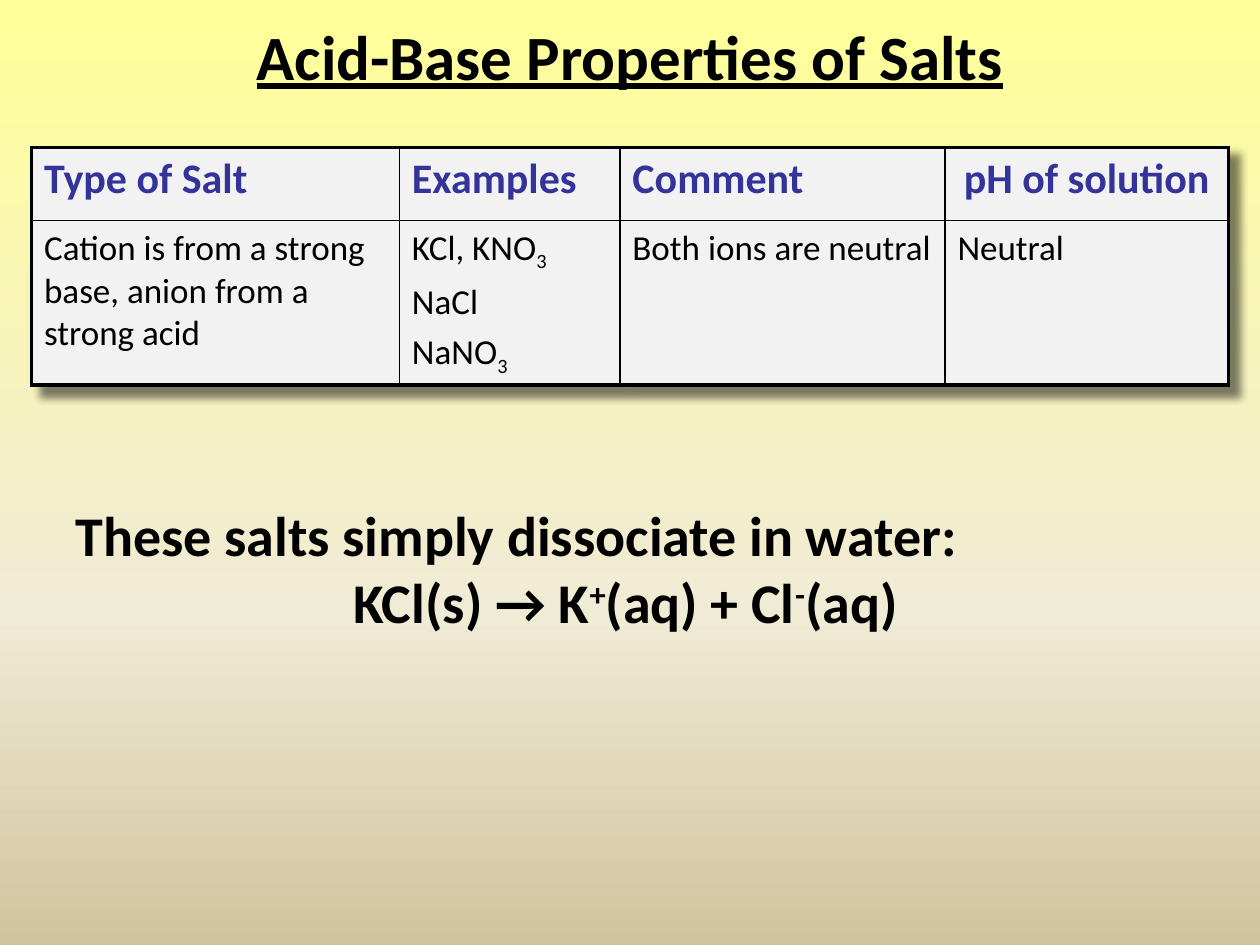
from dataclasses import dataclass

from pptx import Presentation
from pptx import util as u
from pptx.dml.color import RGBColor
from pptx.enum import text
from pptx.oxml import parse_xml
from pptx.oxml.ns import nsdecls


@dataclass(frozen=True)
class Theme:
    font: str = "Calibri"
    ink: str = "000000"
    heading: str = "333399"
    cell: str = "F2F2F2"
    backdrop: tuple = ((0, "FFFF99"), (65, "F0EBD5"), (100, "D1C39F"))
    title_size: int = 36
    note_size: int = 32
    head_size: int = 24
    cell_size: int = 20
    outer_line: float = 2.25
    inner_line: float = 1
    subscript: int = -25
    superscript: int = 30


THEME = Theme()
WIDTH, HEIGHT = u.Inches(10), u.Inches(7.5)
COLUMNS = (2.92, 1.75, 2.58, 2.25)
ROWS = (0.58, 1.24)
LEFT, CENTER = text.PP_ALIGN.LEFT, text.PP_ALIGN.CENTER
SUB_3 = ("3", THEME.subscript)

# Each cell is a list of paragraphs, each paragraph a list of (words, baseline)
HEADINGS = ("Type of Salt", "Examples", "Comment", "pH of solution")
SALTS = (
    [[("Cation is from a strong base, anion from a strong acid", 0)]],
    [[("KCl, KNO", 0), SUB_3], [("NaCl", 0)], [("NaNO", 0), SUB_3]],
    [[("Both ions are neutral", 0)]],
    [[("Neutral", 0)]],
)
REACTION = [("KCl(s) → K", 0), ("+", THEME.superscript), ("(aq) + Cl", 0),
            ("-", THEME.superscript), ("(aq)", 0)]


def xml(markup):
    """Make an element from markup that starts with a prefixed tag."""
    tag, rest = markup.split(" ", 1)
    return parse_xml(f"{tag} {nsdecls('a', 'p')} {rest}")


def share(left, top, width, height):
    return (round(WIDTH * left), round(HEIGHT * top),
            round(WIDTH * width), round(HEIGHT * height))


def add_spans(para, spans, size, color=THEME.ink, bold=False, underline=None):
    for words, baseline in spans:
        span = para.add_run()
        span.text = words
        font = span.font
        font.name, font.size = THEME.font, u.Pt(size)
        font.bold, font.underline = bold, underline
        font.color.rgb = RGBColor.from_string(color)
        if baseline:
            span._r.get_or_add_rPr().set("baseline", str(baseline * 1000))


def add_paragraphs(frame, paragraphs, align=LEFT, before=0, **style):
    for index, spans in enumerate(paragraphs):
        para = frame.add_paragraph() if index else frame.paragraphs[0]
        para.alignment = align
        if before:
            para._p.get_or_add_pPr().append(xml(
                f'<a:spcBef ><a:spcPct val="{before * 1000}"/></a:spcBef>'))
        add_spans(para, spans, **style)


def paint_background(page):
    stops = "".join(
        f'<a:gs pos="{place * 1000}"><a:srgbClr val="{color}"/></a:gs>'
        for place, color in THEME.backdrop)
    page._element.cSld.insert(0, xml(
        f'<p:bg ><p:bgPr><a:gradFill rotWithShape="1"><a:gsLst>{stops}</a:gsLst>'
        '<a:lin ang="5400000" scaled="0"/></a:gradFill><a:effectLst/></p:bgPr></p:bg>'))


def add_title(page):
    title = page.shapes.title
    title.left, title.top, title.width, title.height = share(0.05, 0, 0.9, 0.116)
    title.text_frame.vertical_anchor = text.MSO_ANCHOR.MIDDLE
    add_paragraphs(title.text_frame, [[("Acid-Base Properties of Salts", 0)]], CENTER,
                   size=THEME.title_size, bold=True, underline=True)


def style_cell(cell, row, column):
    """Heavy lines on the table's edge, light ones inside, plain fill."""
    on_edge = {"L": column == 0, "R": column == len(COLUMNS) - 1,
               "T": row == 0, "B": row == len(ROWS) - 1}
    properties = cell._tc.get_or_add_tcPr()
    for side, outer in on_edge.items():
        weight = u.Pt(THEME.outer_line if outer else THEME.inner_line)
        properties.append(xml(
            f'<a:ln{side} w="{int(weight)}"><a:solidFill>'
            f'<a:srgbClr val="{THEME.ink}"/></a:solidFill></a:ln{side}>'))
    cell.fill.solid()
    cell.fill.fore_color.rgb = RGBColor.from_string(THEME.cell)


def add_salt_table(page):
    table = page.shapes.add_table(
        len(ROWS), len(COLUMNS), u.Inches(0.25), u.Inches(1.17),
        u.Inches(sum(COLUMNS)), u.Inches(sum(ROWS))).table
    table.horz_banding = False
    for column, width in zip(table.columns, COLUMNS):
        column.width = u.Inches(width)
    for row, height in zip(table.rows, ROWS):
        row.height = u.Inches(height)
    # Soft shadow to the lower right
    table._tbl.tblPr.insert(0, xml(
        '<a:effectLst ><a:outerShdw blurRad="50800" dist="88900" dir="2700000" '
        f'algn="tl" rotWithShape="0"><a:srgbClr val="{THEME.ink}">'
        '<a:alpha val="50000"/></a:srgbClr></a:outerShdw></a:effectLst>'))

    for column, (heading, salt) in enumerate(zip(HEADINGS, SALTS)):
        head, body = table.cell(0, column), table.cell(1, column)
        for row, cell in enumerate((head, body)):
            style_cell(cell, row, column)
        align = CENTER if column == len(COLUMNS) - 1 else LEFT
        add_paragraphs(head.text_frame, [[(heading, 0)]], align, before=20,
                       size=THEME.head_size, color=THEME.heading, bold=True)
        add_paragraphs(body.text_frame, salt, before=20, size=THEME.cell_size)


def add_note(page):
    box = page.shapes.add_textbox(*share(0.05, 0.523, 0.893, 0.156))
    frame = box.text_frame
    frame.word_wrap = True
    frame.auto_size = text.MSO_AUTO_SIZE.SHAPE_TO_FIT_TEXT
    style = dict(size=THEME.note_size, bold=True)
    add_paragraphs(frame, [[("These salts simply dissociate in water:", 0)]], **style)
    reaction = frame.add_paragraph()
    reaction.alignment = CENTER
    add_spans(reaction, REACTION, **style)


def main():
    deck = Presentation()
    deck.slide_width, deck.slide_height = WIDTH, HEIGHT
    page = deck.slides.add_slide(deck.slide_layouts.get_by_name("Title Only"))
    paint_background(page)
    add_title(page)
    add_salt_table(page)
    add_note(page)
    deck.save("out.pptx")


if __name__ == "__main__":
    main()
